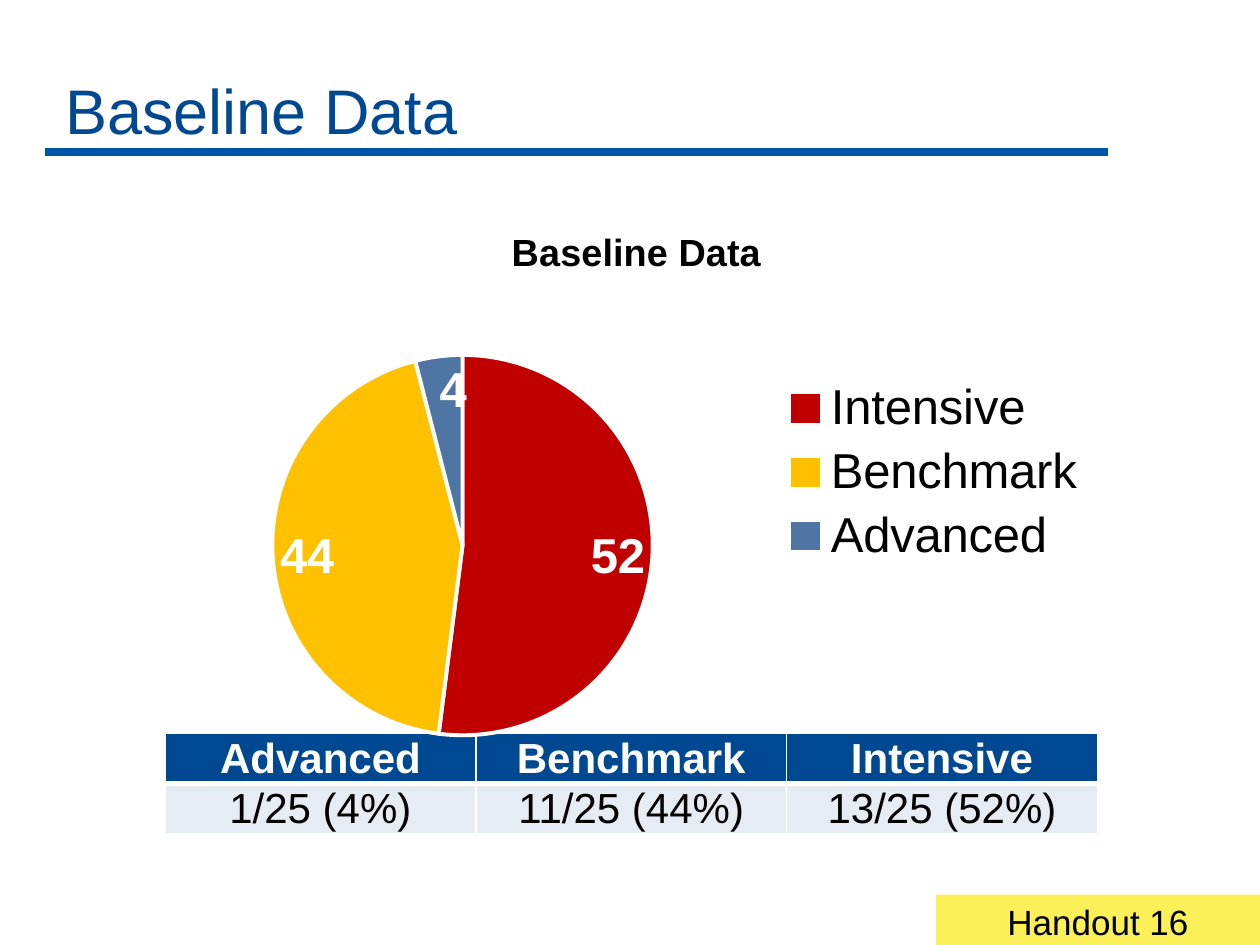
from lxml.etree import SubElement
from pptx import Presentation
from pptx.chart.data import CategoryChartData
from pptx.dml.color import RGBColor
from pptx.enum.chart import XL_CHART_TYPE, XL_LABEL_POSITION, XL_LEGEND_POSITION
from pptx.enum.shapes import MSO_CONNECTOR, MSO_SHAPE
from pptx.enum.text import MSO_ANCHOR, PP_ALIGN
from pptx.oxml.ns import qn
from pptx.util import Inches, Pt

COLORS = {name: RGBColor.from_string(value) for name, value in {
    "title": "004992", "rule": "0054A8", "white": "FFFFFF", "black": "000000",
    "band": "E6ECF3", "handout": "FCF059",
    "Intensive": "C00000", "Benchmark": "FFC000", "Advanced": "4E75A3",
}.items()}


def style_font(font, size, color, bold=False):
    for attribute, value in {"name": "Arial", "size": Pt(size), "bold": bold}.items():
        setattr(font, attribute, value)
    font.color.rgb = COLORS[color]


def place_chart_part(part, index, values):
    """Give a chart part a manual layout, in fractions of the chart's size."""
    for old in part.findall(qn("c:layout")):
        part.remove(old)
    layout = SubElement(part, qn("c:layout"))
    part.insert(index, layout)
    manual = SubElement(layout, qn("c:manualLayout"))
    for tag, value in values.items():
        SubElement(manual, qn(f"c:{tag}")).set("val", str(value))


prs = Presentation()
prs.slide_width, prs.slide_height = Inches(10), Inches(7.5)
slide = prs.slides.add_slide(prs.slide_layouts[6])
shapes = slide.shapes

# Heading and rule
rule = shapes.add_connector(MSO_CONNECTOR.STRAIGHT, Inches(0.36), Inches(1.21),
                            Inches(8.79), Inches(1.21))
rule.line.color.rgb = COLORS["rule"]
rule.line.width = Pt(4.5)
SubElement(rule._element.spPr, qn("a:effectLst"))

heading = shapes.add_textbox(Inches(0.42), Inches(0), Inches(8.3), Inches(1.22)).text_frame
heading.word_wrap = True
heading.vertical_anchor = MSO_ANCHOR.BOTTOM
heading.text = "Baseline Data"
style_font(heading.paragraphs[0].font, 36, "title")

# Table of student counts
rows = [["Advanced", "Benchmark", "Intensive"],
        ["1/25 (4%)", "11/25 (44%)", "13/25 (52%)"]]
row_formats = [{"fill": "title", "text": "white", "bold": True, "bottom": 3},
               {"fill": "band", "text": "black", "bold": False, "bottom": 1}]
counts = shapes.add_table(2, 3, Inches(1.31), Inches(5.82), Inches(7.4), Inches(0.74)).table
for r, (labels, row_format) in enumerate(zip(rows, row_formats)):
    for c, label in enumerate(labels):
        cell = counts.cell(r, c)
        for attribute, value in {"margin_left": Inches(0.07), "margin_right": Inches(0.07),
                                 "margin_top": 0, "margin_bottom": 0, "text": label,
                                 "vertical_anchor": MSO_ANCHOR.MIDDLE}.items():
            setattr(cell, attribute, value)
        paragraph = cell.text_frame.paragraphs[0]
        paragraph.alignment = PP_ALIGN.CENTER
        style_font(paragraph.font, 24, row_format["text"], row_format["bold"])
        properties = cell._tc.get_or_add_tcPr()
        top = row_formats[0]["bottom"] if r else 1
        for edge, width in {"lnL": 1, "lnR": 1, "lnT": top,
                            "lnB": row_format["bottom"]}.items():
            border = SubElement(properties, qn(f"a:{edge}"), w=str(Pt(width)))
            border_fill = SubElement(border, qn("a:solidFill"))
            SubElement(border_fill, qn("a:srgbClr"), val=str(COLORS["white"]))
        cell.fill.solid()
        cell.fill.fore_color.rgb = COLORS[row_format["fill"]]

# Pie of percentages
levels = {"Intensive": 52, "Benchmark": 44, "Advanced": 4}
percentages = CategoryChartData()
percentages.categories = list(levels)
percentages.add_series("Baseline Data", list(levels.values()))
pie = shapes.add_chart(XL_CHART_TYPE.PIE, Inches(1.24), Inches(1.53), Inches(7.48),
                       Inches(4.44), percentages).chart
style_font(pie.font, 18, "black")
pie.has_title = True
pie_title = pie.chart_title.text_frame
pie_title.text = "Baseline Data"
style_font(pie_title.paragraphs[0].font, 21.6, "black", True)
pie.has_legend = True
pie.legend.position = XL_LEGEND_POSITION.RIGHT
pie.legend.include_in_layout = False
style_font(pie.legend.font, 28, "black")

plot = pie.plots[0]
plot.vary_by_categories = True
for index, level in enumerate(levels):
    point = plot.series[0].points[index].format
    point.fill.solid()
    point.fill.fore_color.rgb = COLORS[level]
    point.line.color.rgb = COLORS["white"]
    point.line.width = Pt(2.25)
plot.has_data_labels = True
plot.data_labels.show_value = True
plot.data_labels.show_percentage = False
plot.data_labels.position = XL_LABEL_POSITION.INSIDE_END
style_font(plot.data_labels.font, 28, "white", True)

edges = {"xMode": "edge", "yMode": "edge"}
plot_area = pie._chartSpace.chart.plotArea
place_chart_part(plot_area, 0, {"layoutTarget": "inner", **edges,
                                "x": 0.12, "y": 0.29, "w": 0.41, "h": 0.68})
place_chart_part(pie.legend._element, 1, {**edges, "x": 0.66, "y": 0.32, "w": 0.33, "h": 0.36})
place_chart_part(pie.chart_title._element, 1, {**edges, "x": 0.37, "y": 0.05})

# Handout tag
handout = shapes.add_shape(MSO_SHAPE.RECTANGLE, Inches(7.43), Inches(7.1),
                           Inches(2.57), Inches(0.4))
handout.shadow.inherit = False
handout.fill.solid()
handout.fill.fore_color.rgb = COLORS["handout"]
handout.line.fill.background()
handout.text_frame.vertical_anchor = MSO_ANCHOR.TOP
handout.text_frame.text = "Handout 16"
handout_line = handout.text_frame.paragraphs[0]
handout_line.alignment = PP_ALIGN.CENTER
style_font(handout_line.font, 20, "black")

prs.save("out.pptx")
